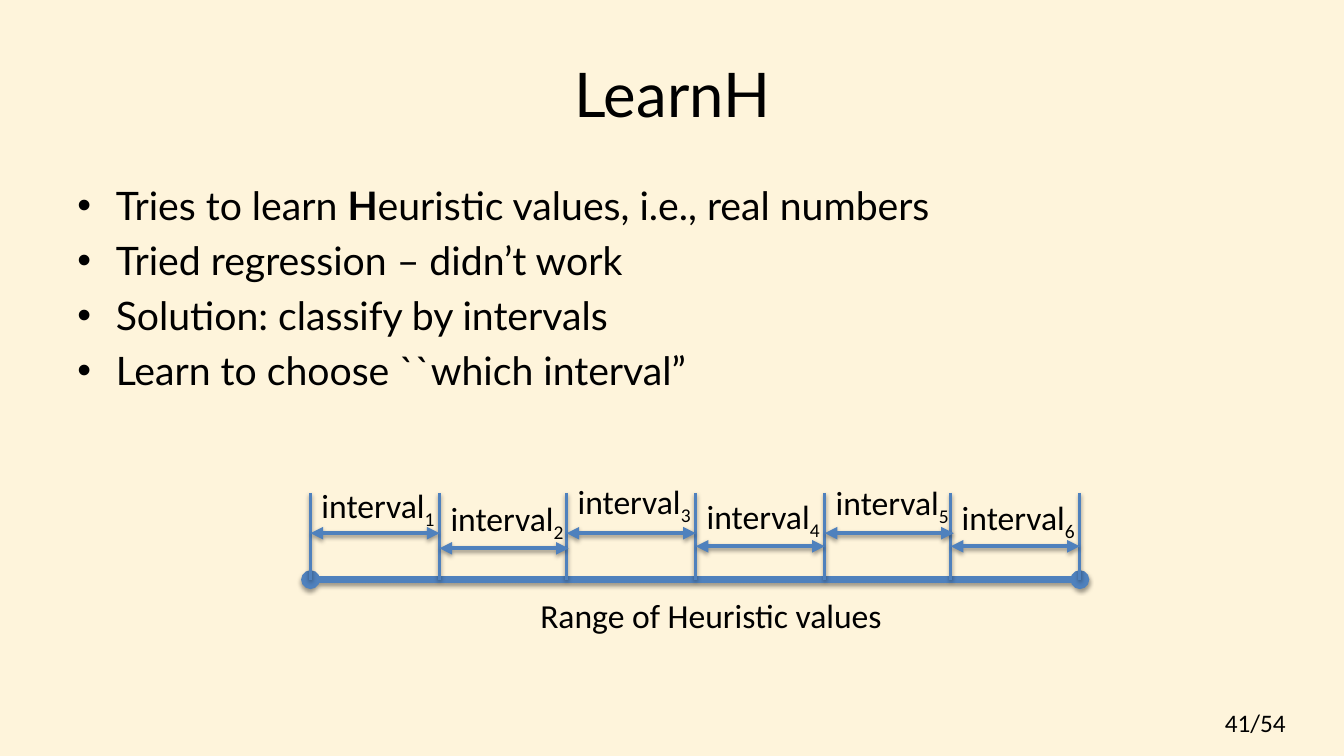
import dataclasses

import pptx
import pptx.dml.color
import pptx.enum.shapes
import pptx.enum.text
import pptx.oxml
import pptx.oxml.ns
import pptx.util

Inches = pptx.util.Inches
Pt = pptx.util.Pt
PP_ALIGN = pptx.enum.text.PP_ALIGN
MSO_ANCHOR = pptx.enum.text.MSO_ANCHOR


@dataclasses.dataclass(frozen=True)
class Theme:
    background: str = "FEF4DB"
    ink: str = "000000"
    axis: str = "4F81BD"
    heading_font: str = "Lato"
    label_font: str = "Calibri"
    title_size: int = 44
    body_size: int = 28
    label_size: int = 24
    number_size: int = 18


def rgb(code):
    return pptx.dml.color.RGBColor.from_string(code)


def apply(target, values):
    for name, value in values.items():
        setattr(target, name, value)


class SlideBuilder:
    SHADOW = (
        '<a:effectLst %s><a:outerShdw blurRad="%d" dist="%d" dir="5400000" rotWithShape="0">'
        '<a:srgbClr val="000000"><a:alpha val="38000"/></a:srgbClr>'
        "</a:outerShdw></a:effectLst>"
    ) % (pptx.oxml.ns.nsdecls("a"), Pt(3.1), Pt(1.6))

    def __init__(self, deck, theme):
        self.theme = theme
        self.slide = deck.slides.add_slide(deck.slide_layouts[6])
        fill = self.slide.background.fill
        fill.solid()
        fill.fore_color.rgb = rgb(theme.background)

    def text(self, box, paragraphs, size, font, align=PP_ALIGN.LEFT,
             anchor=MSO_ANCHOR.TOP, bullets=False):
        """Each paragraph is a list of (text, style); style is "", "bold" or "sub"."""
        frame = self.slide.shapes.add_textbox(*map(Inches, box)).text_frame
        apply(frame, {"word_wrap": True, "vertical_anchor": anchor})
        for index, runs in enumerate(paragraphs):
            paragraph = frame.paragraphs[0] if index == 0 else frame.add_paragraph()
            paragraph.alignment = align
            if bullets:
                self.bullet(paragraph)
                paragraph.space_before = Pt(0.2 * size if index else 0)
            for words, style in runs:
                run = paragraph.add_run()
                run.text = words
                apply(run.font, {"name": font, "size": Pt(size), "bold": style == "bold"})
                run.font.color.rgb = rgb(self.theme.ink)
                if style == "sub":
                    run._r.get_or_add_rPr().set("baseline", "-25000")

    def bullet(self, paragraph):
        properties = paragraph._p.get_or_add_pPr()
        indent = Inches(0.38)
        properties.set("marL", str(indent))
        properties.set("indent", str(-indent))
        properties.append(pptx.oxml.parse_xml(
            '<a:buFont %s typeface="Arial"/>' % pptx.oxml.ns.nsdecls("a")))
        properties.append(pptx.oxml.parse_xml(
            '<a:buChar %s char="•"/>' % pptx.oxml.ns.nsdecls("a")))

    def line(self, start, end, width, ends=None):
        connector = self.slide.shapes.add_connector(
            pptx.enum.shapes.MSO_CONNECTOR.STRAIGHT, *map(Inches, start + end))
        connector.line.color.rgb = rgb(self.theme.axis)
        connector.line.width = Pt(width)
        if ends:
            outline = connector.line._get_or_add_ln()
            for tag in ("headEnd", "tailEnd"):
                outline.append(pptx.oxml.parse_xml(
                    '<a:%s %s type="%s"/>' % (tag, pptx.oxml.ns.nsdecls("a"), ends)))
        connector._element.spPr.append(pptx.oxml.parse_xml(self.SHADOW))


def main():
    deck = pptx.Presentation()
    apply(deck, {"slide_width": Inches(13.33), "slide_height": Inches(7.5)})
    theme = Theme()
    page = SlideBuilder(deck, theme)

    # Page number and title
    page.text((12.05, 6.97, 1.23, 0.4), [[("41/54", "")]],
              theme.number_size, theme.label_font)
    page.text((0.67, 0.3, 12, 1.25), [[("LearnH", "")]], theme.title_size,
              theme.heading_font, PP_ALIGN.CENTER, MSO_ANCHOR.MIDDLE)

    # Main points
    points = [
        [("Tries to learn ", ""), ("H", "bold"),
         ("euristic values, i.e., real numbers", "")],
        [("Tried regression – didn’t work", "")],
        [("Solution: classify by intervals", "")],
        [("Learn to choose ``which interval”", "")],
    ]
    page.text((0.67, 1.75, 12, 4.95), points, theme.body_size,
              theme.heading_font, bullets=True)

    # Range axis with interval boundaries
    boundaries = [3.08, 4.36, 5.62, 6.9, 8.18, 9.43, 10.71]
    axis_y, boundary_top = 5.75, 4.89
    page.line((boundaries[0], axis_y), (boundaries[-1], axis_y), 4.5, "oval")
    for x in boundaries:
        page.line((x, boundary_top), (x, axis_y), 2)

    # Interval spans: arrow height and label top
    interval_width = 1.28
    spans = [(5.29, 4.76), (5.44, 4.89), (5.29, 4.72),
             (5.42, 4.87), (5.29, 4.73), (5.42, 4.88)]
    for x, (arrow_y, _) in zip(boundaries, spans):
        page.line((x, arrow_y), (x + interval_width, arrow_y), 3, "triangle")
    for number, (x, (_, label_top)) in enumerate(zip(boundaries, spans), 1):
        page.text((x + 0.01, label_top, 1.41, 0.5),
                  [[("interval", ""), (str(number), "sub")]],
                  theme.label_size, theme.label_font)

    # Axis caption
    page.text((5.26, 5.85, 3.81, 0.5), [[("Range of Heuristic values", "")]],
              theme.label_size, theme.label_font)

    deck.save("out.pptx")


if __name__ == "__main__":
    main()
